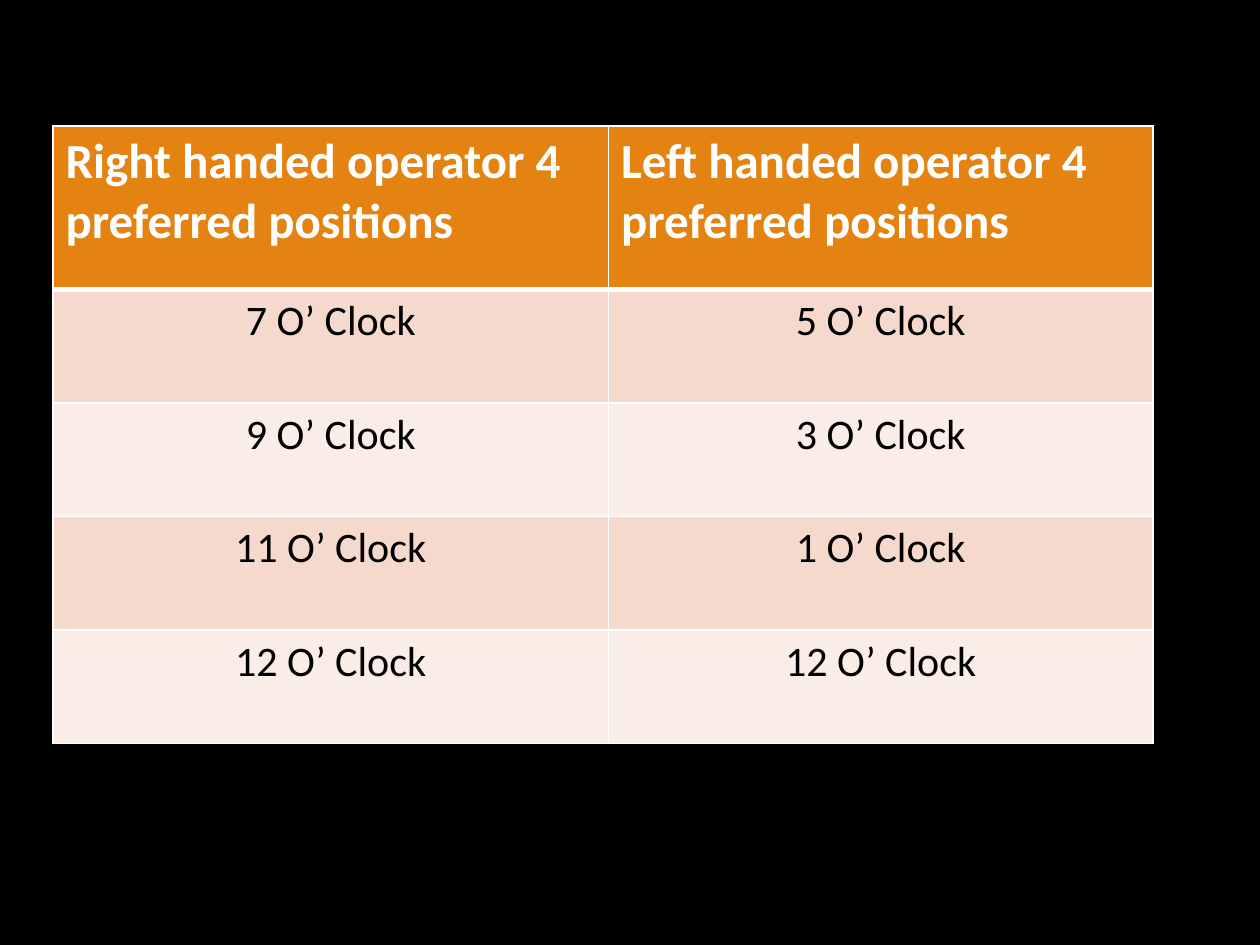
from pptx import Presentation
from pptx import util as u
from pptx.dml.color import RGBColor
from pptx.enum import text
from pptx.oxml import parse_xml
from pptx.oxml.ns import nsdecls

POSITIONS = [
    ("Right handed operator 4 preferred positions",
     "Left handed operator 4 preferred positions"),
    ("7 O’ Clock", "5 O’ Clock"),
    ("9 O’ Clock", "3 O’ Clock"),
    ("11 O’ Clock", "1 O’ Clock"),
    ("12 O’ Clock", "12 O’ Clock"),
]
COL_WIDTHS = [4.41, 4.32]
ROW_HEIGHTS = [1.3] + [0.9] * 4


def color(hex_value):
    return RGBColor.from_string(hex_value)


class SlideBuilder:
    font = "Calibri"
    border = "FFFFFF"
    header_fill = "E48312"
    band_fills = ("FAEDE7", "F5D9CC")
    header_format = {"size": u.Pt(28), "bold": True}
    body_format = {"size": u.Pt(24), "bold": False}

    def __init__(self, s):
        self.s = s

    def background(self, hex_value):
        fill = self.s.background.fill
        fill.solid()
        fill.fore_color.rgb = color(hex_value)

    def borders(self, cell, **widths):
        """Draw cell edges; widths are points keyed by L, R, T, B in schema order."""
        tc_pr = cell._tc.get_or_add_tcPr()
        for i, (side, width) in enumerate(widths.items()):
            tc_pr.insert(i, parse_xml(
                f'<a:ln{side} {nsdecls("a")} w="{u.Pt(width)}"><a:solidFill>'
                f'<a:srgbClr val="{self.border}"/></a:solidFill></a:ln{side}>'))

    def cell(self, cell, value, row):
        header = row == 0
        cell.fill.solid()
        cell.fill.fore_color.rgb = color(
            self.header_fill if header else self.band_fills[row % 2])
        p = cell.text_frame.paragraphs[0]
        p.alignment = text.PP_ALIGN.LEFT if header else text.PP_ALIGN.CENTER
        r = p.add_run()
        r.text = value
        r.font.name = self.font
        for name, setting in (self.header_format if header else self.body_format).items():
            setattr(r.font, name, setting)
        r.font.color.rgb = color("FFFFFF" if header else "000000")
        self.borders(cell, L=1, R=1, T=3 if row == 1 else 1, B=3 if header else 1)

    def table(self, left, top, col_widths, row_heights, rows):
        table = self.s.shapes.add_table(
            len(rows), len(col_widths), u.Inches(left), u.Inches(top),
            u.Inches(sum(col_widths)), u.Inches(sum(row_heights))).table
        for column, width in zip(table.columns, col_widths):
            column.width = u.Inches(width)
        for i, (row, height) in enumerate(zip(table.rows, row_heights)):
            row.height = u.Inches(height)
            for cell, value in zip(row.cells, rows[i]):
                self.cell(cell, value, i)


def main():
    prs = Presentation()
    prs.slide_width, prs.slide_height = u.Inches(10), u.Inches(7.5)
    builder = SlideBuilder(prs.slides.add_slide(prs.slide_layouts[6]))
    builder.background("000000")
    builder.table(0.42, 1, COL_WIDTHS, ROW_HEIGHTS, POSITIONS)
    prs.save("out.pptx")


if __name__ == "__main__":
    main()
